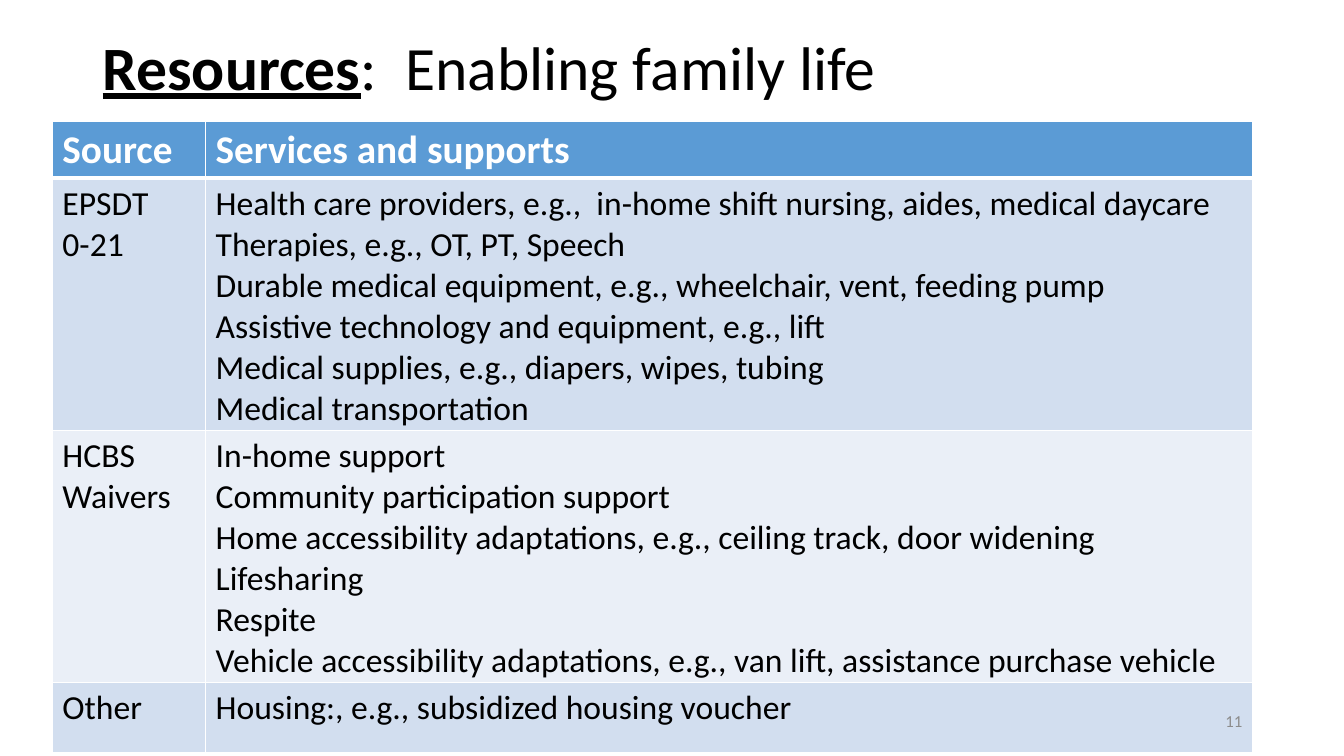
from pptx import Presentation
from pptx import util as u
from pptx.dml.color import RGBColor
from pptx.enum import text
from pptx.oxml import parse_xml
from pptx.oxml.ns import nsdecls

WIDTH, HEIGHT = u.Inches(13.33), u.Inches(7.5)
FONT = "Calibri"
COLORS = {
    "ink": "000000",
    "white": "FFFFFF",
    "header": "5B9BD5",
    "band_dark": "D2DEEF",
    "band_light": "EAEFF7",
    "number": "8C8C8C",
}

# Column widths and row heights as percentages of the slide
COLUMNS = [11.4, 77.87]
ROWS = [7.33, 26.8, 29.07, 9.33]
RESOURCES = [
    (["Source"], ["Services and supports"]),
    (["EPSDT", "0-21"], [
        "Health care providers, e.g.,  in-home shift nursing, aides, medical daycare",
        "Therapies, e.g., OT, PT, Speech",
        "Durable medical equipment, e.g., wheelchair, vent, feeding pump",
        "Assistive technology and equipment, e.g., lift",
        "Medical supplies, e.g., diapers, wipes, tubing",
        "Medical transportation",
    ]),
    (["HCBS Waivers"], [
        "In-home support",
        "Community participation support",
        "Home accessibility adaptations, e.g., ceiling track, door widening",
        "Lifesharing",
        "Respite",
        "Vehicle accessibility adaptations, e.g., van lift, assistance purchase vehicle",
    ]),
    (["Other"], ["Housing:, e.g., subsidized housing voucher"]),
]


def across(percent):
    return round(WIDTH * percent / 100)


def down(percent):
    return round(HEIGHT * percent / 100)


def style_span(span, size, color, bold=False, underline=False):
    font = span.font
    font.name, font.size = FONT, u.Pt(size)
    font.bold, font.underline = bold, underline
    font.color.rgb = RGBColor.from_string(COLORS[color])


def add_text(page, left, top, width, height):
    """Add a wrapped, vertically centred text box; return its first paragraph."""
    box = page.shapes.add_textbox(across(left), down(top), across(width), down(height))
    frame = box.text_frame
    frame.word_wrap = True
    frame.vertical_anchor = text.MSO_ANCHOR.MIDDLE
    return frame.paragraphs[0]


def add_title(page):
    para = add_text(page, 6.9, 1.47, 86.27, 15.6)
    para.line_spacing = 0.9
    for words, strong in [("Resources", True), (":  Enabling family life", False)]:
        span = para.add_run()
        span.text = words
        style_span(span, 44, "ink", bold=strong, underline=strong)


def add_page_number(page, number):
    para = add_text(page, 70.67, 92.67, 22.5, 5.33)
    para.text = str(number)
    para.alignment = text.PP_ALIGN.RIGHT
    style_span(para.runs[0], 12, "number")


def set_borders(cell, top, bottom):
    properties = cell._tc.get_or_add_tcPr()
    for side, points in [("L", 1), ("R", 1), ("T", top), ("B", bottom)]:
        properties.append(parse_xml(
            f'<a:ln{side} {nsdecls("a")} w="{u.Pt(points)}"><a:solidFill>'
            f'<a:srgbClr val="{COLORS["white"]}"/></a:solidFill></a:ln{side}>'))


def fill_cell(cell, lines, row):
    # The rule below the header is thicker than the others
    set_borders(cell, top=3 if row == 1 else 1, bottom=3 if row == 0 else 1)
    band = "header" if row == 0 else "band_dark" if row % 2 else "band_light"
    cell.fill.solid()
    cell.fill.fore_color.rgb = RGBColor.from_string(COLORS[band])
    cell.text_frame.text = "\n".join(lines)
    for para in cell.text_frame.paragraphs:
        if row == 0:
            style_span(para.runs[0], 28, "white", bold=True)
        else:
            style_span(para.runs[0], 24, "ink")


def add_resource_table(page):
    table = page.shapes.add_table(
        len(ROWS), len(COLUMNS), across(3.9), down(16),
        across(sum(COLUMNS)), down(sum(ROWS))).table
    for column, share in zip(table.columns, COLUMNS):
        column.width = across(share)
    for row, share in zip(table.rows, ROWS):
        row.height = down(share)
    for row, entries in enumerate(RESOURCES):
        for column, lines in enumerate(entries):
            fill_cell(table.cell(row, column), lines, row)


def main():
    deck = Presentation()
    deck.slide_width, deck.slide_height = WIDTH, HEIGHT
    page = deck.slides.add_slide(deck.slide_layouts[6])
    add_title(page)
    add_resource_table(page)
    add_page_number(page, 11)
    deck.save("out.pptx")


if __name__ == "__main__":
    main()
